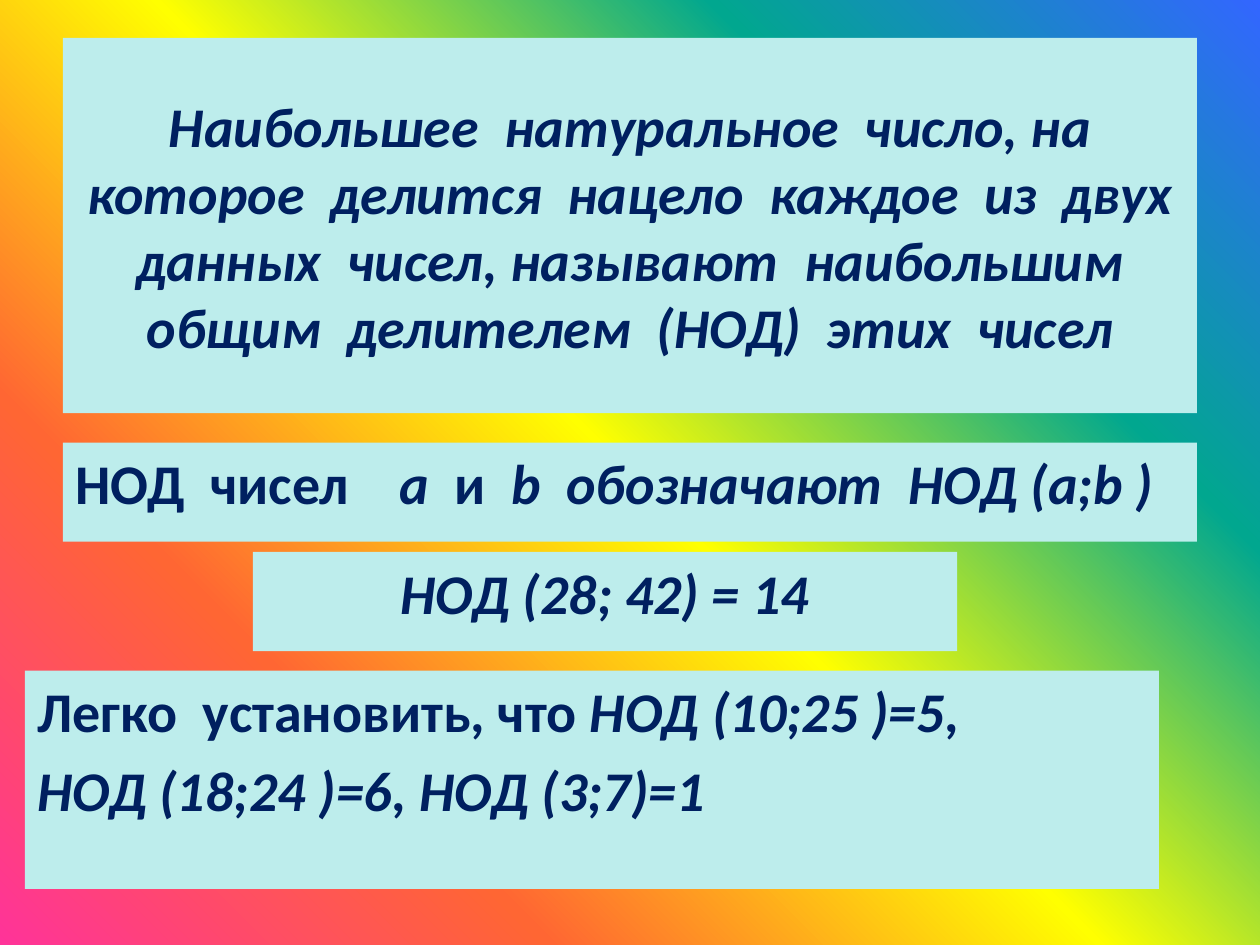
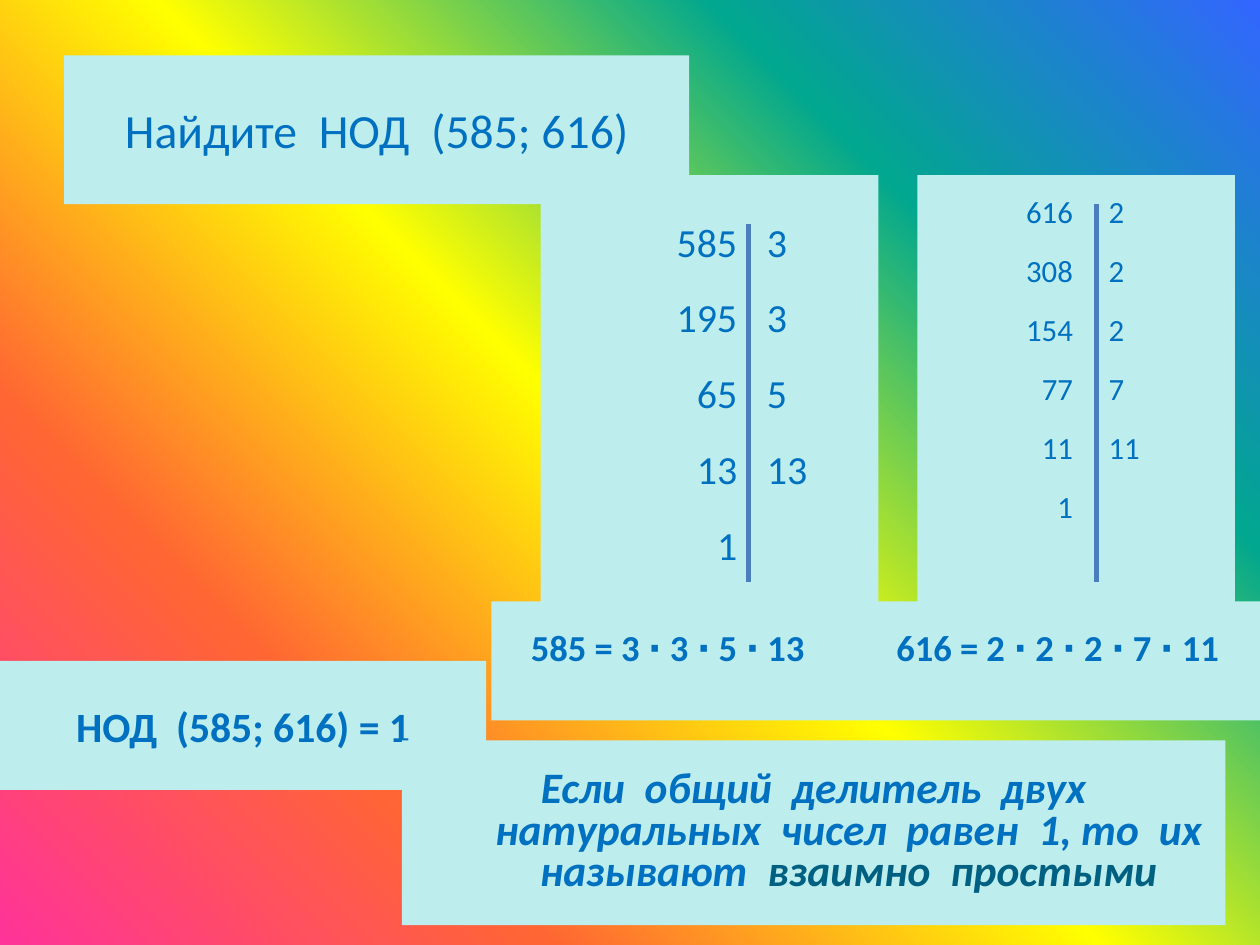
from itertools import groupby
from pptx import Presentation
from pptx import util as u
from pptx.dml import color
from pptx.enum import shapes, text
from pptx.oxml import ns
from lxml import etree

Pt = u.Pt
MID, TOP = text.MSO_ANCHOR.MIDDLE, text.MSO_ANCHOR.TOP
MAIN, LEFT, RIGHT = (text.PP_ALIGN.CENTER, text.PP_ALIGN.LEFT,
                     text.PP_ALIGN.RIGHT)

# Theme: colours and type sizes; space is a word gap in ems
theme = {
    "font": "Calibri",
    "space": 0.226,
    "panel": "BDEDEC",
    "navy": "002060",
    "blue": "0070C0",
    "teal": "006082",
    "rule": "4B7EBC",
    "bands": ["FF3399", "FF6633", "FFFF00", "01A78F", "3366FF"],
    "big": 32, "task": 27.2, "note": 24.8, "answer": 23.8,
    "wide": 22.8, "product": 20.9, "small": 17.6,
}


def panel(sl, at, size, paras, tint="blue", al=MAIN, anchor=MID,
          pad=(7.2, 3.6, 7.2, 3.6), gap=0, after=0, line=None,
          hang=0, fill=True):
    """Draw a panel of (text, style, tint) runs; each _ widens a word gap."""
    box = sl.shapes.add_shape(shapes.MSO_SHAPE.RECTANGLE, *map(Pt, at))
    box.shadow.inherit = False
    box.line.fill.background()
    if fill:
        box.fill.solid()
        box.fill.fore_color.rgb = color.RGBColor.from_string(theme["panel"])
    else:
        box.fill.background()
    frame = box.text_frame
    frame.word_wrap = True
    frame.vertical_anchor = anchor
    (frame.margin_left, frame.margin_top,
     frame.margin_right, frame.margin_bottom) = map(Pt, pad)
    for i, runs in enumerate(paras):
        par = frame.add_paragraph() if i else frame.paragraphs[0]
        par.alignment = al
        par.space_before, par.space_after = Pt(gap), Pt(after)
        if line:
            par.line_spacing = line
        props = par._p.get_or_add_pPr()
        props.set("marL", str(Pt(hang)))
        props.set("indent", str(Pt(-hang)))
        for words, style, *own in runs:
            for broad, part in groupby(words, lambda c: c == "_"):
                part = "".join(part)
                run = par.add_run()
                run.text = " " if broad else part
                font = run.font
                font.name, font.size = theme["font"], Pt(theme[size])
                font.bold, font.italic = "b" in style, "i" in style
                font.color.rgb = color.RGBColor.from_string(
                    theme[own[0] if own else tint])
                if broad:
                    extra = len(part) * theme["space"] * theme[size]
                    run._r.get_or_add_rPr().set("spc", str(round(extra * 100)))


def page(deck):
    """Add a blank slide with the rainbow background."""
    sl = deck.slides.add_slide(deck.slide_layouts[6])
    fill = sl.background.fill
    fill.gradient()
    fill.gradient_angle = 45
    stops = sl.element.find(".//" + ns.qn("a:gsLst"))
    for old in list(stops):
        stops.remove(old)
    for i, hue in enumerate(theme["bands"]):
        stop = etree.SubElement(stops, ns.qn("a:gs"), pos=str(i * 25000))
        etree.SubElement(stop, ns.qn("a:srgbClr"), val=hue)
    return sl


deck = Presentation()
deck.slide_width, deck.slide_height = Pt(720), Pt(540)

# Slide 1: definition of the greatest common divisor
sl = page(deck)
panel(sl, (36, 21.6, 648, 214.5), "big", [[
    ("Наибольшее_натуральное_число, на_которое_делится_нацело_каждое_из_двух_"
     "данных_чисел, называют_наибольшим_общим_делителем_(НОД)_этих_чисел",
     "bi")]], tint="navy")

# Notation and examples
rows = [
    ((36, 252.9, 648, 56.7), LEFT, [[
        ("НОД_чисел___", "b"), ("a_", "bi"), ("и_", "b"),
        ("b_обозначают_НОД (a;b )", "bi")]]),
    ((144.6, 315.4, 402.4, 56.7), MAIN, [[("НОД (28; 42) = 14", "bi")]]),
    ((14.2, 383.2, 648, 124.8), LEFT, [
        [("Легко_установить, что ", "b"), ("НОД (10;25 )=5,", "bi")],
        [("НОД (18;24 )=6, НОД (3;7)=1", "bi")]]),
]
for at, al, paras in rows:
    panel(sl, at, "big", paras, tint="navy", al=al, anchor=TOP, gap=6.4)

# Slide 2: worked example
sl = page(deck)
panel(sl, (36.7, 31.7, 357.1, 85), "task", [[("Найдите_НОД_(585; 616)", "")]])

# Factor columns: numbers, divisors, and a rule between them
cols = [
    (308.9, 193, "wide", 24.2, 15.9, 421.3, 438.3, (427.7, 128.2),
     [585, 195, 65, 13, 1], [3, 3, 5, 13]),
    (524.2, 181.4, "small", 10, 12.6, 613.2, 633.5, (626.4, 116.6),
     [616, 308, 154, 77, 11, 1], [2, 2, 2, 7, 11]),
]
for left, wide, size, top, after, num, div, (x, y), nums, divs in cols:
    panel(sl, (left, 100, wide, 294.5), size, [[(str(n), "")] for n in nums],
          al=RIGHT, anchor=TOP, pad=(0, top, left + wide - num, 0), after=after)
    panel(sl, (div, 100, 50, 294.5), size, [[(str(d), "")] for d in divs],
          al=LEFT, anchor=TOP, pad=(0, top, 0, 0), after=after, fill=False)
    rule = sl.shapes.add_connector(shapes.MSO_CONNECTOR.STRAIGHT,
                                   Pt(x), Pt(y), Pt(x), Pt(332.6))
    rule.line.width = Pt(3)
    rule.line.color.rgb = color.RGBColor.from_string(theme["rule"])
    etree.SubElement(rule.element.spPr, ns.qn("a:effectLst"))

# Answer, products and conclusion
panel(sl, (0, 377.7, 277.8, 73.7), "answer", [[("НОД_(585; 616) = 1", "b")]])
goods = [(280.8, 439.2, 22.6, "585 = 3 ∙ 3 ∙ 5 ∙ 13", True),
         (512.2, 207.8, 0, "616 = 2 ∙ 2 ∙ 2 ∙ 7 ∙ 11", False)]
for left, wide, inset, words, fill in goods:
    panel(sl, (left, 343.7, wide, 68), "product", [[(words, "b")]],
          al=LEFT, pad=(inset, 3.6, 0, 20), fill=fill)
panel(sl, (229.6, 423, 470.6, 105.6), "note", [[
    ("Если_общий_делитель_двух_натуральных_чисел_равен_1, то_их_называют_", "bi"),
    ("взаимно_простыми", "bi", "teal")]], line=0.8, hang=40)

deck.save("out.pptx")
